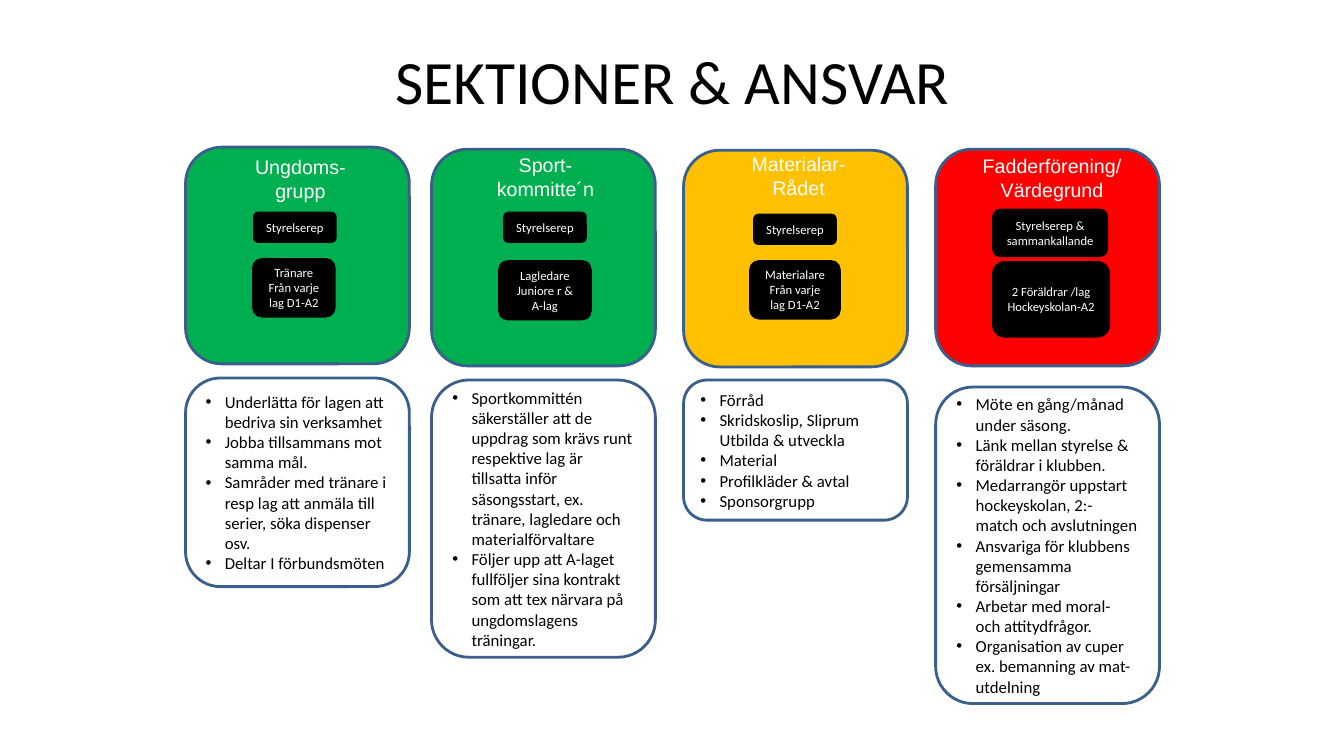
"""Builds the slide on sections and responsibilities."""
from lxml.etree import SubElement
from pptx import Presentation
from pptx.dml.color import RGBColor
from pptx.enum.shapes import MSO_SHAPE
from pptx.enum.text import MSO_ANCHOR, PP_ALIGN
from pptx.oxml.ns import qn
from pptx.util import Inches, Pt

TITLE = "SEKTIONER & ANSVAR"
WHITE, BLACK, BORDER = "FFFFFF", "000000", "3A5F8C"
CARD_WIDTH, CARD_HEIGHT, BULLET_INDENT = 2.22, 2.15, 0.19

SECTIONS = [
    {"left": 1.84, "top": 1.46, "color": "00B050",
     "heading": ((2.35, 1.49, 1.26, 0.57), ["Ungdoms-grupp"]),
     "roles": [((2.51, 2.1, 0.83, 0.31), ["Styrelserep"]),
               ((2.5, 2.56, 0.83, 0.59), ["Tränare", "Från varje lag D1-A2"])],
     "duties": (3.75, 2.07, [
         "Underlätta för lagen att bedriva sin verksamhet",
         "Jobba tillsammans mot samma mål.",
         "Samråder med tränare i resp lag att anmäla till serier, söka dispenser osv.",
         "Deltar I förbundsmöten"])},
    {"left": 4.28, "top": 1.48, "color": "00B050",
     "heading": ((4.7, 1.47, 1.42, 0.57), ["Sport-kommitte´n"]),
     "roles": [((4.99, 2.1, 0.83, 0.31), ["Styrelserep"]),
               ((4.94, 2.58, 0.93, 0.6), ["Lagledare", "Juniore r & A-lag"])],
     "duties": (3.77, 2.75, [
         "Sportkommittén säkerställer att de uppdrag som krävs runt respektive lag är "
         "tillsatta inför säsongsstart, ex. tränare, lagledare och materialförvaltare",
         "Följer upp att A-laget fullföljer sina kontrakt som att tex närvara på "
         "ungdomslagens träningar."])},
    {"left": 6.78, "top": 1.49, "color": "FFC000",
     "heading": ((7.21, 1.46, 1.42, 0.57), ["Materialar-", "Rådet"]),
     "roles": [((7.47, 2.12, 0.83, 0.31), ["Styrelserep"]),
               ((7.43, 2.58, 0.91, 0.59), ["Materialare", "Från varje lag D1-A2"])],
     "duties": (3.77, 1.39, [
         "Förråd",
         "Skridskoslip, Sliprum Utbilda & utveckla",
         "Material",
         "Profilkläder & avtal",
         "Sponsorgrupp"])},
    {"left": 9.28, "top": 1.48, "color": "FF0000",
     "heading": ((9.6, 1.48, 1.67, 0.57), ["Fadderförening/ Värdegrund"]),
     "roles": [((9.84, 2.07, 1.15, 0.48), ["Styrelserep & sammankallande"]),
               ((9.84, 2.59, 1.17, 0.76), ["2 Föräldrar /lag Hockeyskolan-A2"])],
     "duties": (3.84, 3.14, [
         "Möte en gång/månad under säsong.",
         "Länk mellan styrelse & föräldrar i klubben.",
         "Medarrangör uppstart hockeyskolan, 2:- match och avslutningen",
         "Ansvariga för klubbens gemensamma försäljningar",
         "Arbetar med moral- och attitydfrågor.",
         "Organisation av cuper ex. bemanning av mat-utdelning"])},
]


def paint(color_format, value):
    color_format.rgb = RGBColor.from_string(value)


def add_bullet(para):
    properties = para._p.get_or_add_pPr()
    properties.set("marL", str(Inches(BULLET_INDENT)))
    properties.set("indent", str(-Inches(BULLET_INDENT)))
    bullet_color = SubElement(properties, qn("a:buClr"))
    SubElement(bullet_color, qn("a:srgbClr")).set("val", BLACK)
    SubElement(properties, qn("a:buFont")).set("typeface", "Arial")
    SubElement(properties, qn("a:buChar")).set("char", "•")


def write(shape, lines, size, color, font="Calibri", anchor=MSO_ANCHOR.MIDDLE, bullets=False):
    frame = shape.text_frame
    frame.word_wrap = True
    frame.vertical_anchor = anchor
    frame.text = "\n".join(lines)
    for para in frame.paragraphs:
        para.alignment = PP_ALIGN.LEFT if bullets else PP_ALIGN.CENTER
        if bullets:
            add_bullet(para)
        para.font.size = Pt(size)
        para.font.name = font
        paint(para.font.color, color)


def add_text(page, place, *content, **style):
    write(page.shapes.add_textbox(*map(Inches, place)), *content, **style)


def add_card(page, place, fill, border=None):
    card = page.shapes.add_shape(MSO_SHAPE.ROUNDED_RECTANGLE, *map(Inches, place))
    card.shadow.inherit = False
    card.fill.solid()
    paint(card.fill.fore_color, fill)
    if border:
        paint(card.line.color, border)
        card.line.width = Pt(2)
    else:
        card.line.fill.background()
    return card


def add_section(page, section):
    left = section["left"]
    add_card(page, (left, section["top"], CARD_WIDTH, CARD_HEIGHT), section["color"], BORDER)
    place, lines = section["heading"]
    add_text(page, place, lines, 14, WHITE, font="Arial", anchor=MSO_ANCHOR.TOP)
    for place, lines in section["roles"]:
        write(add_card(page, place, BLACK), lines, 9, WHITE)
    top, height, duties = section["duties"]
    panel = add_card(page, (left, top, CARD_WIDTH, height), WHITE, BORDER)
    write(panel, duties, 12, BLACK, bullets=True)


def main():
    deck = Presentation()
    deck.slide_width, deck.slide_height = Inches(13.33), Inches(7.5)
    page = deck.slides.add_slide(deck.slide_layouts[6])
    add_text(page, (2.17, 0.17, 9, 1.25), [TITLE], 44, BLACK)
    for section in SECTIONS:
        add_section(page, section)
    deck.save("out.pptx")


if __name__ == "__main__":
    main()
